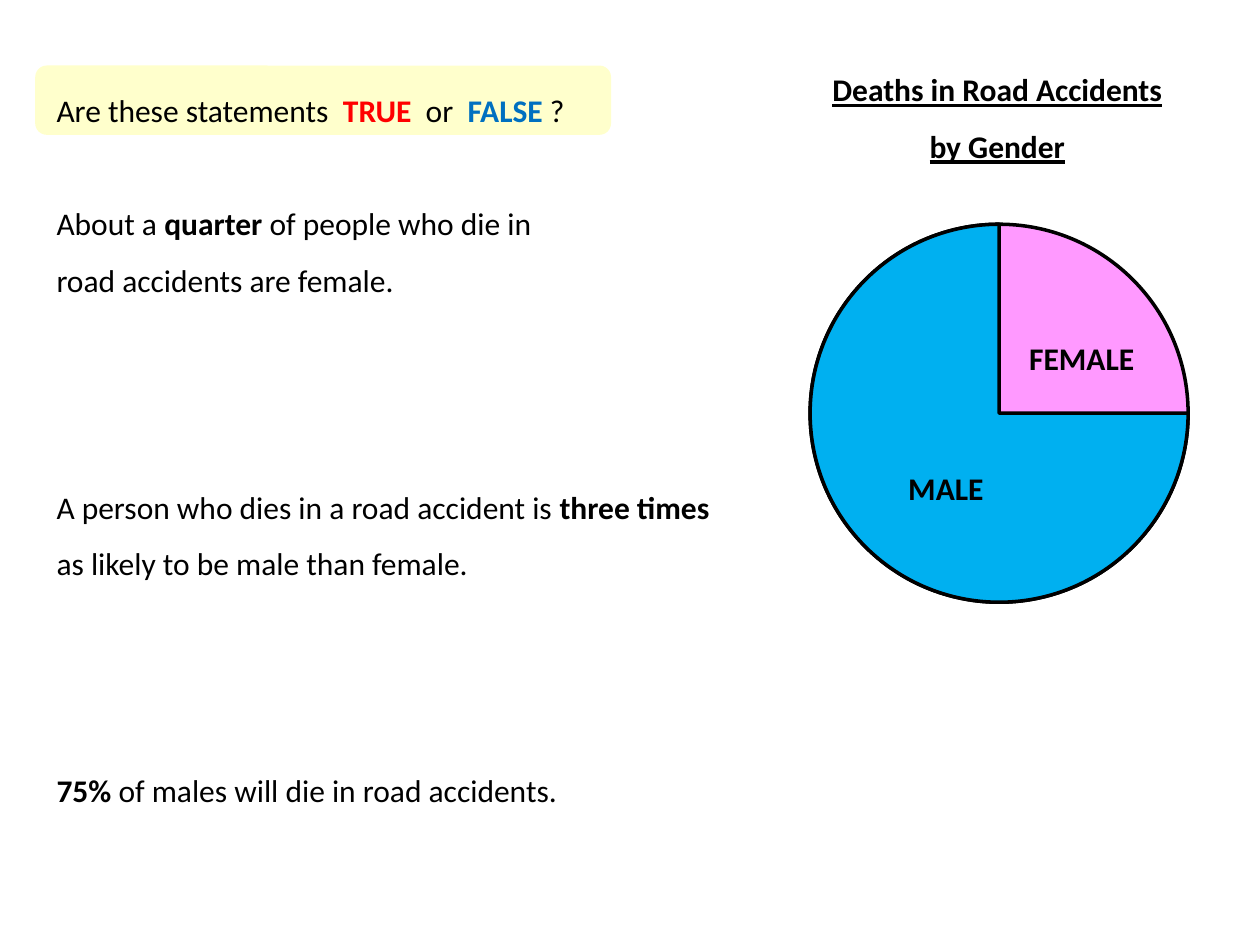
from dataclasses import dataclass

from pptx import Presentation
from pptx.dml.color import RGBColor
from pptx.enum import shapes, text
from pptx.util import Inches, Pt

BLACK = RGBColor(0x00, 0x00, 0x00)
RED = RGBColor(0xFF, 0x00, 0x00)
BLUE = RGBColor(0x00, 0x70, 0xC0)
SKY = RGBColor(0x00, 0xB0, 0xF0)
PINK = RGBColor(0xFF, 0x99, 0xFF)
CREAM = RGBColor(0xFF, 0xFF, 0xCC)
LINE_PITCH = 32.4  # points, 18 pt text at 1.5 lines


@dataclass(frozen=True)
class Box:
    left: float
    top: float
    width: float
    height: float

    def lengths(self) -> tuple:
        return tuple(map(Inches, (self.left, self.top, self.width, self.height)))


@dataclass(frozen=True)
class Run:
    text: str
    bold: bool = False
    color: RGBColor = BLACK


@dataclass(frozen=True)
class Para:
    runs: tuple[Run, ...]
    lines_before: int = 0


def add_shape(s, kind, box: Box, fill: RGBColor, outlined: bool = True) -> None:
    sp = s.shapes.add_shape(kind, *box.lengths())
    sp.shadow.inherit = False
    sp.fill.solid()
    sp.fill.fore_color.rgb = fill
    if outlined:
        sp.line.color.rgb = BLACK
        sp.line.width = Pt(2)
    else:
        sp.line.fill.background()


def add_text(s, box: Box, paras: list[Para], wrap: bool = True,
             spacing: float = 1.5, centred: bool = False,
             underline: bool = False) -> None:
    tf = s.shapes.add_textbox(*box.lengths()).text_frame
    tf.word_wrap = wrap
    tf.auto_size = text.MSO_AUTO_SIZE.SHAPE_TO_FIT_TEXT
    for i, para in enumerate(paras):
        p = tf.add_paragraph() if i else tf.paragraphs[0]
        p.line_spacing = spacing
        p.space_before = Pt(para.lines_before * LINE_PITCH)
        p.alignment = text.PP_ALIGN.CENTER if centred else text.PP_ALIGN.LEFT
        p.font.name = "Calibri"
        p.font.size = Pt(18)
        p.font.underline = underline
        for run in para.runs:
            r = p.add_run()
            r.text = run.text
            r.font.bold = run.bold
            r.font.color.rgb = run.color


QUESTION_BAND = Box(0.28, 0.52, 4.57, 0.55)
TITLE = Box(6.42, 0.36, 2.99, 0.96)
PIE = Box(6.43, 1.78, 3, 3)
LABELS = {
    "FEMALE": Box(8.07, 2.64, 1.04, 0.4),
    "MALE": Box(7.11, 3.67, 0.81, 0.4),
}
STATEMENTS = Box(0.35, 0.52, 5.59, 6.01)
STATEMENT_PARAS = [
    Para((Run("Are these statements  "), Run("TRUE", True, RED), Run("  or  "),
          Run("FALSE", True, BLUE), Run(" ?"))),
    Para((Run("About a "), Run("quarter ", True),
          Run("of people who die in")), lines_before=1),
    Para((Run("road accidents are female."),)),
    Para((Run("A person who dies in a road accident is "),
          Run("three times ", True),
          Run("as likely to be male than female.")), lines_before=3),
    Para((Run("75% ", True),
          Run("of males will die in road accidents.")), lines_before=3),
]


def main() -> None:
    prs = Presentation()
    prs.slide_width, prs.slide_height = Inches(10), Inches(7.5)
    s = prs.slides.add_slide(prs.slide_layouts[6])

    kinds = shapes.MSO_SHAPE
    add_shape(s, kinds.ROUNDED_RECTANGLE, QUESTION_BAND, CREAM, outlined=False)
    add_text(s, TITLE, [Para((Run("Deaths in Road Accidents by Gender", True),))],
             centred=True, underline=True)
    # The three-quarter male sector leaves the female quarter showing.
    add_shape(s, kinds.OVAL, PIE, PINK)
    add_shape(s, kinds.PIE, PIE, SKY)
    for label, box in LABELS.items():
        add_text(s, box, [Para((Run(label, True),))], wrap=False, spacing=1.0)
    add_text(s, STATEMENTS, STATEMENT_PARAS)

    prs.save("out.pptx")


if __name__ == "__main__":
    main()
